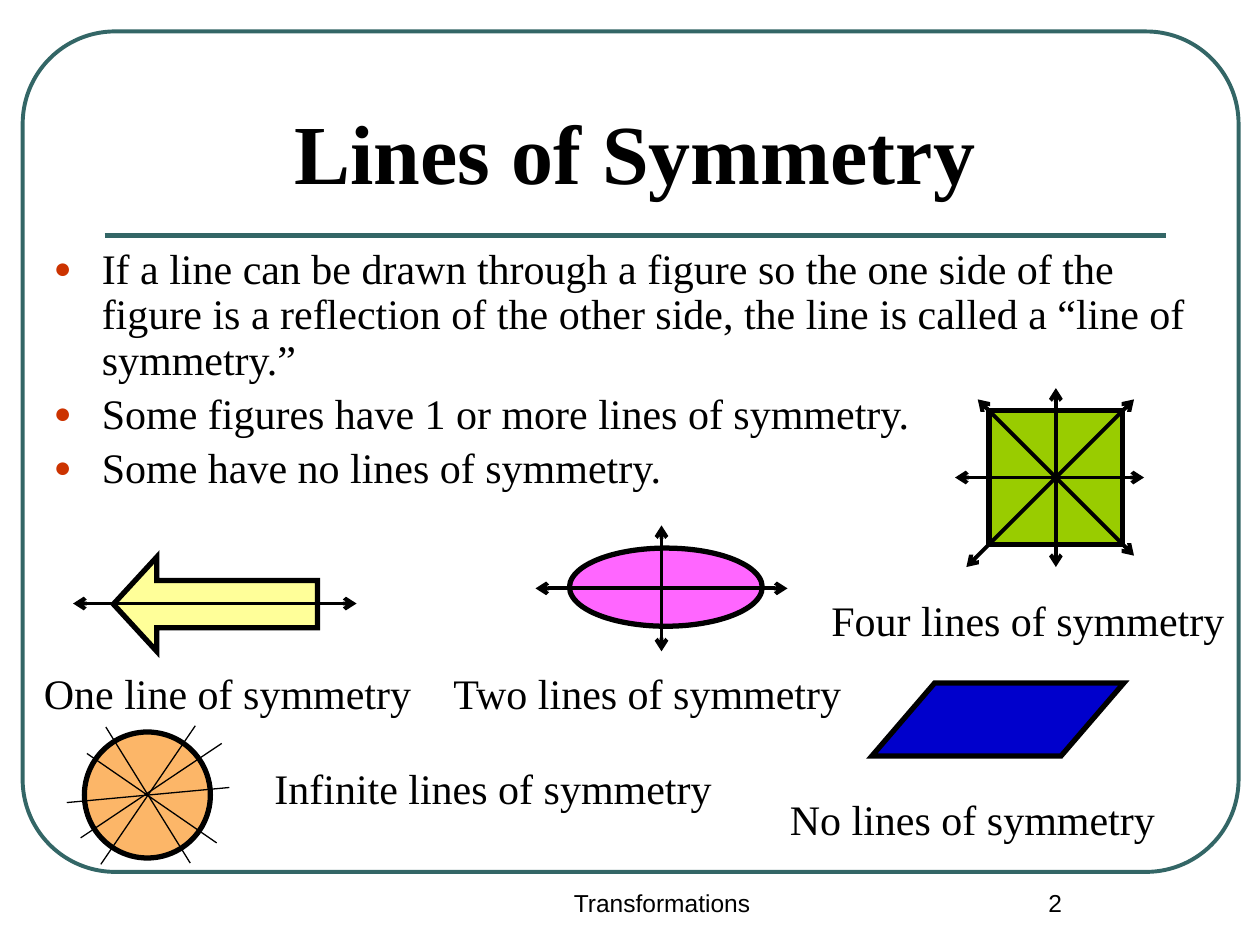
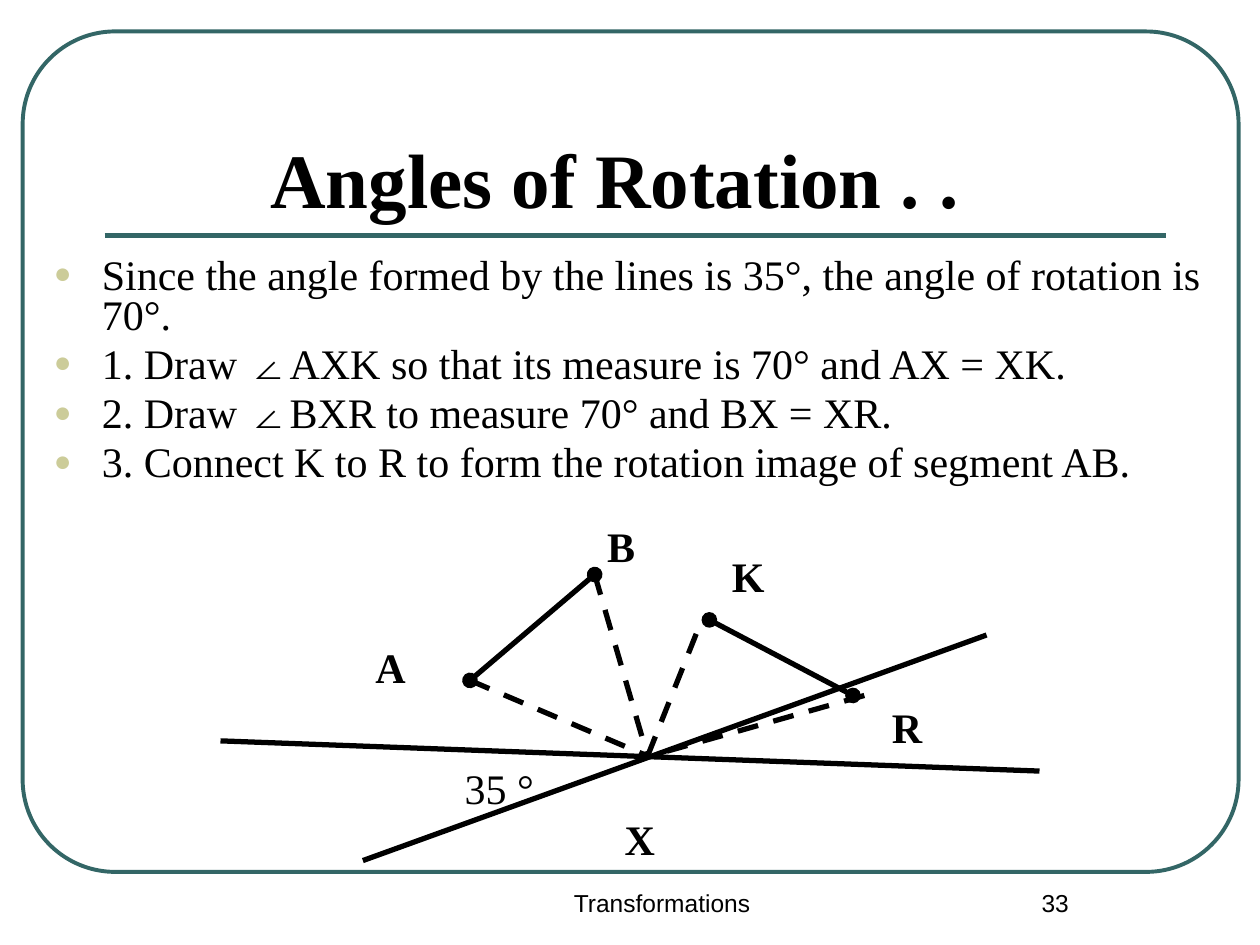
"""Build two geometry slides on symmetry lines and rotation angles."""
from dataclasses import dataclass

from lxml import etree
from pptx import Presentation
from pptx.dml.color import RGBColor
from pptx.enum.dml import MSO_LINE
from pptx.enum.shapes import MSO_CONNECTOR, MSO_SHAPE
from pptx.enum.text import MSO_ANCHOR, MSO_AUTO_SIZE, PP_ALIGN
from pptx.oxml.ns import qn
from pptx.util import Inches, Pt

STRAIGHT = MSO_CONNECTOR.STRAIGHT
DASH = MSO_LINE.DASH
ROUND = MSO_SHAPE.ROUNDED_RECTANGLE
RECT = MSO_SHAPE.RECTANGLE
OVAL = MSO_SHAPE.OVAL
ARROW = MSO_SHAPE.LEFT_ARROW
SLANT = MSO_SHAPE.PARALLELOGRAM
TOP, BOTTOM = MSO_ANCHOR.TOP, MSO_ANCHOR.BOTTOM
LEFT, CENTER = PP_ALIGN.LEFT, PP_ALIGN.CENTER
NO_FIT = MSO_AUTO_SIZE.NONE

SERIF, SANS = "Times New Roman", "Arial"
BLACK, TEAL, RED, SAND = "000000", "336666", "CC3300", "CCCC99"
TITLE_ONLY = 5


@dataclass
class Figure:
    kind: int
    box: tuple
    fill: str = ""
    adj: tuple = ()
    color: str = BLACK
    width: float = 3


@dataclass
class Line:
    start: tuple
    end: tuple
    width: float = 3
    ends: str = ""
    dash: bool = False
    color: str = BLACK


@dataclass
class Label:
    text: str
    box: tuple
    bold: bool = False


@dataclass
class Page:
    title: str
    title_box: tuple
    title_size: int
    number: str
    points: list
    body_box: tuple
    pitch: float
    dot: str
    figures: list
    lines: list
    labels: list


def axis(start: tuple, end: tuple) -> Line:
    return Line(start, end, 2.25, "arrow")


def ray(start: tuple, end: tuple) -> Line:
    return Line(start, end, 0.75)


def dashed(start: tuple, end: tuple) -> Line:
    return Line(start, end, dash=True)


def segment(start: tuple, end: tuple) -> Line:
    return Line(start, end, ends="oval")


def point(name: str, left: float, top: float) -> Label:
    return Label(name, (left, top, 0.85, 0.5), True)


def rgb(color: str) -> RGBColor:
    return RGBColor.from_string(color)


def inches(values: tuple) -> list:
    return [Inches(value) for value in values]


def tag(parent, name: str, **attrs):
    return etree.SubElement(parent, qn(name), attrs)


def stroke(line, color: str, width: float) -> None:
    line.color.rgb = rgb(color)
    line.width = Pt(width)


def write(frame, text, size=24, font=SERIF, bold=False, align=LEFT,
          anchor=TOP, pitch=1.0, gap=0, dot="") -> None:
    lines = [text] if isinstance(text, str) else text
    frame.word_wrap = True
    frame.auto_size = NO_FIT
    frame.vertical_anchor = anchor
    for index, words in enumerate(lines):
        para = frame.add_paragraph() if index else frame.paragraphs[0]
        para.alignment = align
        para.line_spacing = pitch
        para.space_before = Pt(gap)
        run = para.add_run()
        run.text = words
        run.font.size = Pt(size)
        run.font.name = font
        run.font.bold = bold
        run.font.color.rgb = rgb(BLACK)
        if dot:
            add_dot(para, dot)


def add_dot(para, color: str) -> None:
    props = para._p.get_or_add_pPr()
    indent = Inches(0.38)
    props.set("marL", str(indent))
    props.set("indent", str(-indent))
    tag(tag(props, "a:buClr"), "a:srgbClr", val=color)
    tag(props, "a:buSzPct", val="70000")
    tag(props, "a:buFont", typeface=SANS)
    tag(props, "a:buChar", char="●")


def add_text(slide, text, box: tuple, **style) -> None:
    write(slide.shapes.add_textbox(*inches(box)).text_frame, text, **style)


def draw_figure(slide, figure: Figure) -> None:
    shape = slide.shapes.add_shape(figure.kind, *inches(figure.box))
    shape.shadow.inherit = False
    for index, value in enumerate(figure.adj):
        shape.adjustments[index] = value
    if figure.fill:
        shape.fill.solid()
        shape.fill.fore_color.rgb = rgb(figure.fill)
    else:
        shape.fill.background()
    stroke(shape.line, figure.color, figure.width)
    tag(shape.line._get_or_add_ln(), "a:miter", lim="800000")


def draw_line(slide, line: Line) -> None:
    shape = slide.shapes.add_connector(
        STRAIGHT, *inches(line.start + line.end))
    stroke(shape.line, line.color, line.width)
    if line.dash:
        shape.line.dash_style = DASH
    if line.ends:
        for name in ("a:headEnd", "a:tailEnd"):
            tag(shape.line._get_or_add_ln(), name, type=line.ends)
    tag(shape._element.spPr, "a:effectLst")


FRAME = Figure(ROUND, (0.18, 0.25, 9.65, 6.67), adj=(0.11,),
               color=TEAL, width=2.25)
RULE = Line((0.83, 1.87), (9.25, 1.87), color=TEAL)
HUB = (5.14, 6)
A, B = (3.73, 5.4), (4.72, 4.56)

SYMMETRY = Page(
    "Lines of Symmetry", (0.83, 0.62, 8.42, 1.03), 48, "2",
    ["If a line can be drawn through a figure so the one side of the figure "
     "is a reflection of the other side, the line is called a “line of "
     "symmetry.”",
     "Some figures have 1 or more lines of symmetry.",
     "Some have no lines of symmetry."],
    (0.33, 1.92, 9.33, 2.17), 0.9, RED,
    [Figure(ARROW, (0.9, 4.42, 1.62, 0.75), "FFFF99", (0.5, 0.46)),
     Figure(RECT, (7.85, 3.26, 1.06, 1.06), "99CC00"),
     Figure(OVAL, (0.67, 5.81, 1, 1), "FCB668"),
     Figure(SLANT, (6.92, 5.42, 2, 0.58), "0000CC", (0.86,)),
     Figure(OVAL, (4.52, 4.35, 1.53, 0.62), "FF66FF")],
    [axis((0.58, 4.79), (2.83, 4.79)),
     axis((7.58, 3.79), (9.08, 3.79)),
     axis((8.38, 3.08), (8.38, 4.5)),
     axis((7.67, 4.5), (9, 3.17)),
     axis((7.76, 3.17), (9, 4.41)),
     axis((4.25, 4.67), (6.25, 4.67)),
     axis((5.25, 4.17), (5.25, 5.17)),
     ray((0.69, 5.98), (1.72, 6.69)),
     ray((1.55, 5.76), (0.8, 6.86)),
     ray((0.53, 6.37), (1.82, 6.25)),
     ray((0.84, 5.77), (1.51, 6.85)),
     ray((0.64, 6.65), (1.76, 5.9))],
    [Label("One line of symmetry", (0.25, 5.25, 3.17, 0.5)),
     Label("Infinite lines of symmetry", (2.08, 6, 3.83, 0.5)),
     Label("Four lines of symmetry", (6.5, 4.67, 3.45, 0.5)),
     Label("Two lines of symmetry", (3.5, 5.25, 3.75, 0.5)),
     Label("No lines of symmetry", (6.17, 6.25, 3.58, 0.5))])

ROTATION = Page(
    "Angles of Rotation . .", (0.83, 0.58, 8.1, 1.25), 44, "33",
    ["Since the angle formed by the lines is 35°, the angle of rotation "
     "is 70°.",
     "1. Draw ∠AXK so that its measure is 70° and AX = XK.",
     "2. Draw ∠BXR to measure 70° and BX = XR.",
     "3. Connect K to R to form the rotation image of segment AB."],
    (0.33, 2, 9.42, 3.25), 0.8, SAND,
    [],
    [Line((2.88, 6.83), (7.83, 5.04)),
     Line((1.75, 5.88), (8.25, 6.12)),
     segment(A, B),
     dashed(A, HUB),
     dashed(HUB, (5.57, 4.92)),
     dashed(B, HUB),
     dashed((6.86, 5.52), (5.23, 5.98)),
     segment((5.63, 4.92), (6.77, 5.52))],
    [point("A", 2.88, 5.04),
     point("B", 4.72, 4.08),
     point("X", 4.86, 6.41),
     point("K", 5.71, 4.32),
     point("R", 6.98, 5.52),
     Label("35 °", (3.59, 6, 1.27, 0.5))])


def build(deck, page: Page) -> None:
    slide = deck.slides.add_slide(deck.slide_layouts[TITLE_ONLY])
    draw_figure(slide, FRAME)
    draw_line(slide, RULE)
    for text, box in (("Transformations", (3.67, 7, 3.17, 0.5)),
                      (page.number, (7.5, 7, 1.75, 0.5))):
        add_text(slide, text, box, size=14, font=SANS, align=CENTER)
    title = slide.shapes.title
    title.left, title.top, title.width, title.height = inches(page.title_box)
    write(title.text_frame, page.title, size=page.title_size, bold=True,
          align=CENTER, anchor=BOTTOM)
    add_text(slide, page.points, page.body_box, pitch=page.pitch, gap=5,
             dot=page.dot)
    for figure in page.figures:
        draw_figure(slide, figure)
    for line in page.lines:
        draw_line(slide, line)
    for label in page.labels:
        add_text(slide, label.text, label.box, bold=label.bold)


def main() -> None:
    deck = Presentation()
    deck.slide_width, deck.slide_height = inches((10, 7.5))
    for page in (SYMMETRY, ROTATION):
        build(deck, page)
    deck.save("out.pptx")


if __name__ == "__main__":
    main()
